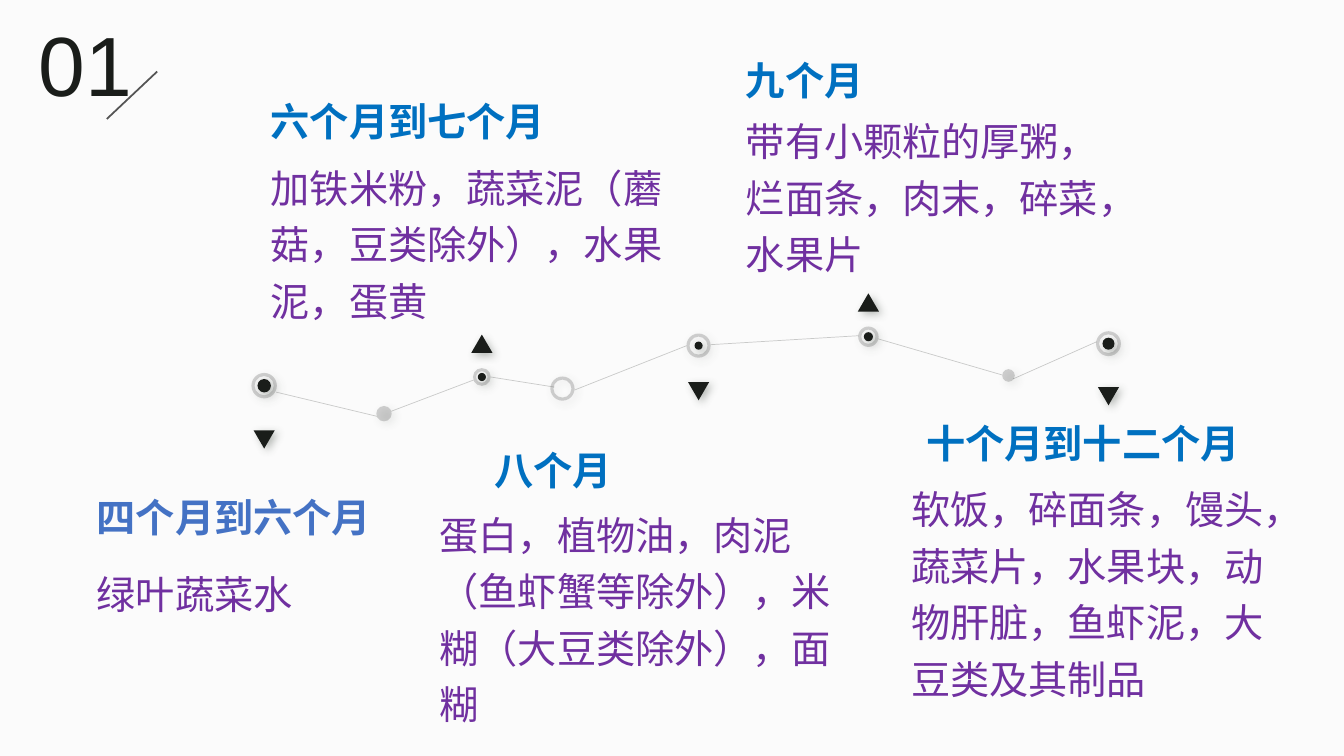
import pptx
import pptx.util
import pptx.dml.color
import pptx.enum.shapes
import pptx.enum.text
import pptx.oxml
import pptx.oxml.ns
import lxml.etree

Pt = pptx.util.Pt
SHAPE = pptx.enum.shapes.MSO_SHAPE
ANCHOR = pptx.enum.text.MSO_ANCHOR
COLOURS = {"back": "FBFBFB", "ink": "1A1D1A", "grey": "545454", "shadow": "505950",
           "blue": "0070C0", "soft blue": "4472C4", "purple": "7030A0"}
CJK = "Noto Sans CJK SC"

NUMBER = "01"
# heading, colour, heading box, food, food box; boxes are left, top, width, height
STAGES = [
    ("四个月到六个月", "soft blue", (69.2, 352.8, 246, 32.4),
     "绿叶蔬菜水", (69.2, 384.5, 246, 72.7)),
    ("六个月到七个月", "blue", (193.5, 60, 285, 52),
     "加铁米粉，蔬菜泥（蘑菇，豆类除外），水果泥，蛋黄", (193.5, 112.3, 285, 117.4)),
    ("八个月", "blue", (353.2, 313.2, 259, 45.4),
     "蛋白，植物油，肉泥（鱼虾蟹等除外），米糊（大豆类除外），面糊",
     (314, 367.2, 301.7, 144)),
    ("九个月", "blue", (532.8, 32.4, 252, 49.7),
     "带有小颗粒的厚粥，烂面条，肉末，碎菜，水果片", (532.8, 82, 252, 111.6)),
    ("十个月到十二个月", "blue", (661.7, 282.2, 258.5, 68.4),
     "软饭，碎面条，馒头，蔬菜片，水果块，动物肝脏，鱼虾泥，大豆类及其制品",
     (650.9, 344.2, 258.5, 153.4)),
]
# centre x, centre y, ring diameter, dot diameter, distance down to the triangle
RINGS = [
    (188.7, 275.5, 18.2, 9.6, 38.4),
    (344.2, 269.3, 12.7, 5.8, -23.8),
    (401.8, 277.6, 17.3, None, None),
    (499, 246.9, 17.3, 5.8, 32.5),
    (620.3, 240.5, 14.6, 6.5, -24.5),
    (791.8, 245.5, 17.8, 8.6, 37.5),
]
PALE_DOTS = [(274.3, 295.5, 11), (720.4, 268.2, 9)]
LINKS = [
    (197.3, 280.1, 269.3, 297.4), (279.4, 293.8, 338.4, 271.4),
    (350.6, 269.3, 396, 276.5), (410.4, 278.6, 490.3, 247),
    (507.6, 246.2, 613.4, 239.8), (627.1, 242, 715.7, 267.8),
    (723.6, 270.7, 783.4, 244.1),
]
SLASH = (112.3, 51.1, 76.3, 85)
RING_THICKNESS = 2.2
TRIANGLE = (15.1, 13)


def colour(name):
    return pptx.dml.color.RGBColor.from_string(COLOURS[name])


def add_alpha(element, percent):
    """Make the first plain colour inside the element partly transparent."""
    tone = element.find(".//" + pptx.oxml.ns.qn("a:srgbClr"))
    alpha = lxml.etree.SubElement(tone, pptx.oxml.ns.qn("a:alpha"))
    alpha.set("val", str(percent * 1000))


def add_shadow(shape):
    shape.element.spPr.append(pptx.oxml.parse_xml(
        f'<a:effectLst {pptx.oxml.ns.nsdecls("a")}>'
        '<a:outerShdw blurRad="76200" dist="38100" dir="2700000" algn="tl" rotWithShape="0">'
        f'<a:srgbClr val="{COLOURS["shadow"]}"><a:alpha val="40000"/></a:srgbClr>'
        '</a:outerShdw></a:effectLst>'))


def add_mark(page, kind, x, y, width, height, tone, alpha=None):
    """Add a borderless shadowed shape centred on x, y."""
    mark = page.shapes.add_shape(kind, Pt(x - width / 2), Pt(y - height / 2),
                                 Pt(width), Pt(height))
    mark.fill.solid()
    mark.fill.fore_color.rgb = colour(tone)
    mark.line.fill.background()
    if alpha:
        add_alpha(mark.element.spPr, alpha)
    add_shadow(mark)
    return mark


def add_line(page, ends, tone, weight, alpha=None):
    line = page.shapes.add_connector(pptx.enum.shapes.MSO_CONNECTOR.STRAIGHT,
                                     *[Pt(value) for value in ends])
    line.line.color.rgb = colour(tone)
    line.line.width = Pt(weight)
    if alpha:
        add_alpha(line.element.spPr, alpha)
    lxml.etree.SubElement(line.element.spPr, pptx.oxml.ns.qn("a:effectLst"))


def add_span(para, text, size, font, tone, bold=False):
    span = para.add_run()
    span.text = text
    span.font.size = Pt(size)
    span.font.name = font
    span.font.bold = bold
    span.font.color.rgb = colour(tone)
    east = lxml.etree.SubElement(span.font._element, pptx.oxml.ns.qn("a:ea"))
    east.set("typeface", font)


def add_label(page, place, text, tone, bold=False, spacing=1.0):
    box = page.shapes.add_textbox(*[Pt(value) for value in place])
    frame = box.text_frame
    frame.word_wrap = True
    frame.vertical_anchor = ANCHOR.MIDDLE
    frame.margin_left = frame.margin_right = frame.margin_top = frame.margin_bottom = 0
    para = frame.paragraphs[0]
    para.line_spacing = spacing
    add_span(para, text, 28, CJK, tone, bold)


def add_number(page):
    title = page.shapes.title
    title.left, title.top, title.width, title.height = Pt(20.2), Pt(5), Pt(82), Pt(80)
    frame = title.text_frame
    frame.word_wrap = True
    frame.auto_size = pptx.enum.text.MSO_AUTO_SIZE.NONE
    frame.vertical_anchor = ANCHOR.TOP
    para = frame.paragraphs[0]
    para.alignment = pptx.enum.text.PP_ALIGN.LEFT
    para.line_spacing = 1.0
    add_span(para, NUMBER, 60, "Arial", "ink")


def main():
    deck = pptx.Presentation()
    deck.slide_width, deck.slide_height = Pt(960), Pt(540)
    page = deck.slides.add_slide(deck.slide_layouts.get_by_name("Title Only"))
    page.background.fill.solid()
    page.background.fill.fore_color.rgb = colour("back")

    add_number(page)
    add_line(page, SLASH, "grey", 1.25)
    for ends in LINKS:
        add_line(page, ends, "ink", 0.5, 22)
    for x, y, size in PALE_DOTS:
        add_mark(page, SHAPE.OVAL, x, y, size, size, "grey", 26)
    for x, y, size, dot, drop in RINGS:
        ring = add_mark(page, SHAPE.DONUT, x, y, size, size, "grey", 26)
        ring.adjustments[0] = RING_THICKNESS / size
        if dot:
            add_mark(page, SHAPE.OVAL, x, y, dot, dot, "ink")
            pointer = add_mark(page, SHAPE.ISOSCELES_TRIANGLE, x, y + drop, *TRIANGLE, "ink")
            pointer.rotation = 180 if drop > 0 else 0
    for heading, tone, heading_box, food, food_box in STAGES:
        add_label(page, heading_box, heading, tone, bold=True)
        add_label(page, food_box, food, "purple", spacing=1.2)
    deck.save("out.pptx")


if __name__ == "__main__":
    main()
